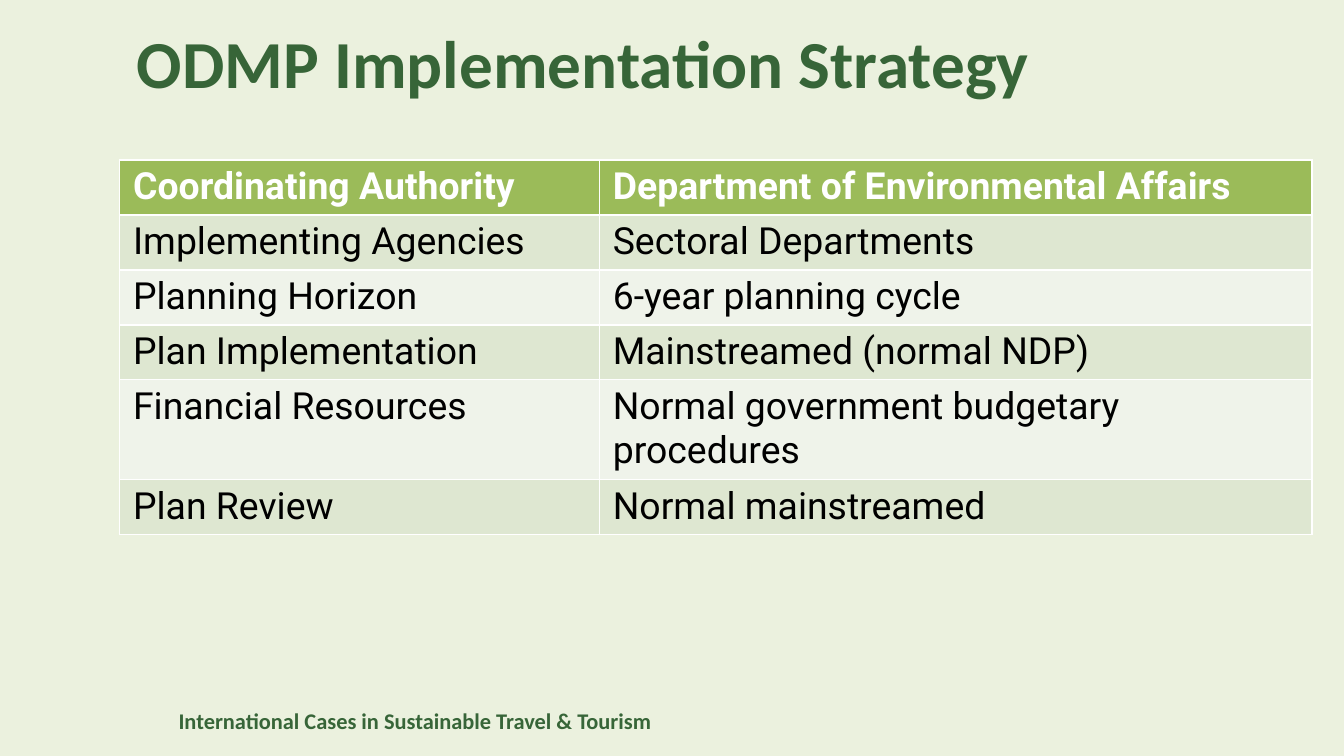
from pptx import Presentation
from pptx.dml.color import RGBColor
from pptx.enum import text
from pptx.util import Inches, Pt

GREEN = "376538"
HEADER_FILL = "9BBB59"
BAND_FILLS = ("DEE7D1", "EFF3EA")
ROWS = [
    ("Coordinating Authority", "Department of Environmental Affairs"),
    ("Implementing Agencies", "Sectoral Departments"),
    ("Planning Horizon", "6-year planning cycle"),
    ("Plan Implementation", "Mainstreamed (normal NDP)"),
    ("Financial Resources", "Normal government budgetary procedures"),
    ("Plan Review", "Normal mainstreamed"),
]
COL_WIDTHS = (3.57, 5.3)
ROW_HEIGHTS = (0.33, 0.33, 0.33, 0.33, 0.43, 0.33)


def rgb(value):
    return RGBColor.from_string(value)


def write(tf, content, size, color, font="Calibri", bold=False):
    r = tf.paragraphs[0].add_run()
    r.text = content
    r.font.name = font
    r.font.size = Pt(size)
    r.font.bold = bold
    r.font.color.rgb = rgb(color)


def add_text(s, box, content, anchor=text.MSO_ANCHOR.TOP, **fmt):
    tf = s.shapes.add_textbox(*map(Inches, box)).text_frame
    tf.word_wrap = True
    tf.vertical_anchor = anchor
    write(tf, content, **fmt)


def add_strategy_table(s, left, top):
    """Fill the strategy table; its white rules come from the default table style."""
    width, height = sum(COL_WIDTHS), sum(ROW_HEIGHTS)
    table = s.shapes.add_table(len(ROWS), len(COL_WIDTHS), Inches(left), Inches(top),
                               Inches(width), Inches(height)).table
    for column, w in zip(table.columns, COL_WIDTHS):
        column.width = Inches(w)
    for i, (row, h, contents) in enumerate(zip(table.rows, ROW_HEIGHTS, ROWS)):
        row.height = Inches(h)
        header = i == 0
        for cell, content in zip(row.cells, contents):
            cell.fill.solid()
            cell.fill.fore_color.rgb = rgb(HEADER_FILL if header else BAND_FILLS[(i - 1) % 2])
            cell.margin_left = cell.margin_right = Inches(0.1)
            cell.margin_top = cell.margin_bottom = Pt(2.7)
            write(cell.text_frame, content, 20, "FFFFFF" if header else "000000",
                  font="Roboto", bold=header)


def main():
    prs = Presentation()
    prs.slide_width = Inches(10)
    prs.slide_height = Inches(10 * 9 / 16)
    s = prs.slides.add_slide(prs.slide_layouts[6])
    s.background.fill.solid()
    s.background.fill.fore_color.rgb = rgb("EBF1DE")
    add_text(s, (1.23, 5.21, 5.81, 0.3), "International Cases in Sustainable Travel & Tourism",
             size=12, color=GREEN, bold=True)
    add_text(s, (0.92, 0.19, 8.75, 0.54), "ODMP Implementation Strategy",
             anchor=text.MSO_ANCHOR.MIDDLE, size=36, color=GREEN, bold=True)
    add_strategy_table(s, 0.89, 1.19)
    prs.save("out.pptx")


if __name__ == "__main__":
    main()
